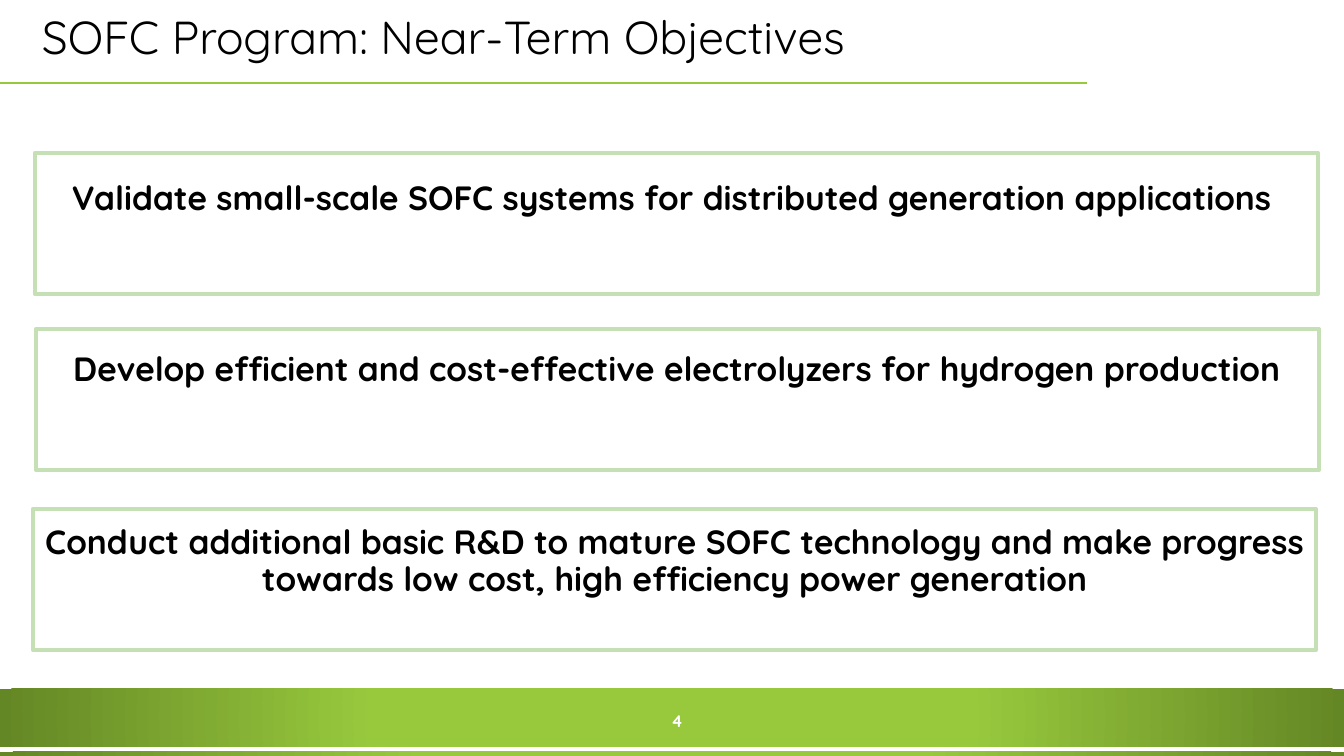
from lxml.etree import SubElement
from pptx import Presentation
from pptx.dml.color import RGBColor
from pptx.enum.shapes import MSO_CONNECTOR, MSO_SHAPE
from pptx.enum.text import MSO_ANCHOR, PP_ALIGN
from pptx.oxml.ns import qn
from pptx.util import Pt

EMU_PER_PX = 914400 / 100.8
PAGE_WIDTH, PAGE_HEIGHT = 1344, 756
FONT = "Quicksand"
BLACK = RGBColor(0x00, 0x00, 0x00)
WHITE = RGBColor(0xFF, 0xFF, 0xFF)
LIME = RGBColor(0x98, 0xC9, 0x3D)
OLIVE = RGBColor(0x64, 0x87, 0x25)
PALE_GREEN = RGBColor(0xC5, 0xE0, 0xB4)

TITLE_FORMAT = {"size": Pt(33), "color": BLACK, "bold": False}
OBJECTIVE_FORMAT = {"size": Pt(24), "color": BLACK, "bold": True}
NUMBER_FORMAT = {"size": Pt(12), "color": WHITE, "bold": True}

OBJECTIVES = [
    ((35, 153), (31, 177),
     "Validate small-scale SOFC systems for distributed generation applications"),
    ((36, 329), (36, 348),
     "Develop efficient and cost-effective electrolyzers for hydrogen production"),
    ((33, 509), (34, 521),
     "Conduct additional basic R&D to mature SOFC technology and make progress "
     "towards low cost, high efficiency power generation"),
]


def px(*lengths):
    """Turn pixel lengths into EMU."""
    return [round(length * EMU_PER_PX) for length in lengths]


def add_rule(page, start, end):
    """Draw the green line under the title."""
    rule = page.shapes.add_connector(MSO_CONNECTOR.STRAIGHT, *px(*start, *end))
    rule.line.color.rgb = LIME
    rule.line.width = Pt(1.75)
    SubElement(rule.element.spPr, qn("a:effectLst"))


def add_rectangle(page, left, top, width, height):
    """Add a rectangle without a shadow."""
    box = page.shapes.add_shape(MSO_SHAPE.RECTANGLE, *px(left, top, width, height))
    box.shadow.inherit = False
    return box


def add_band(page, top, height, lime_end):
    """Add a full-width band shaded from lime at the centre to olive."""
    band = add_rectangle(page, 0, top, PAGE_WIDTH, height)
    band.line.fill.background()
    band.fill.gradient()
    stops = zip(band.fill.gradient_stops, (lime_end, 1), (LIME, OLIVE))
    for stop, position, color in stops:
        stop.position = position
        stop.color.rgb = color
    gradient = band.element.spPr.find(qn("a:gradFill"))
    gradient.remove(gradient.find(qn("a:lin")))
    circle = SubElement(gradient, qn("a:path"), path="circle")
    SubElement(circle, qn("a:fillToRect"),
               {side: "50000" for side in ("l", "t", "r", "b")})


def add_frame(page, left, top):
    """Add the outlined white frame of an objective."""
    frame = add_rectangle(page, left, top, 1283, 141)
    frame.fill.solid()
    frame.fill.fore_color.rgb = WHITE
    frame.line.color.rgb = PALE_GREEN
    frame.line.width = Pt(3)


def add_text(page, place, text, font_format, para_format, anchor=MSO_ANCHOR.TOP):
    """Add a wrapped text box holding one paragraph."""
    box = page.shapes.add_textbox(*px(*place))
    box.text_frame.word_wrap = True
    box.text_frame.vertical_anchor = anchor
    para = box.text_frame.paragraphs[0]
    for name, value in para_format.items():
        setattr(para, name, value)
    span = para.add_run()
    span.text = text
    span.font.name = FONT
    for name, value in font_format.items():
        if name == "color":
            span.font.color.rgb = value
        else:
            setattr(span.font, name, value)


def main():
    """Build the slide and save it."""
    deck = Presentation()
    deck.slide_width, deck.slide_height = px(PAGE_WIDTH, PAGE_HEIGHT)
    page = deck.slides.add_slide(deck.slide_layouts[6])

    add_rule(page, (0, 83), (1087, 83))
    add_band(page, 689, 58, 0.44)
    add_band(page, 752, 4, 0.37)
    add_text(page, (32, 6, 1057, 67), "SOFC Program: Near-Term Objectives",
             TITLE_FORMAT, {"line_spacing": 0.9}, MSO_ANCHOR.MIDDLE)
    add_text(page, (650, 701, 43, 40), "4", NUMBER_FORMAT,
             {"alignment": PP_ALIGN.RIGHT}, MSO_ANCHOR.MIDDLE)

    centred = {"alignment": PP_ALIGN.CENTER, "line_spacing": 0.9,
               "space_after": Pt(12)}
    for frame_corner, text_corner, text in OBJECTIVES:
        add_frame(page, *frame_corner)
        add_text(page, (*text_corner, 1281, 90), text, OBJECTIVE_FORMAT, centred)

    deck.save("out.pptx")


if __name__ == "__main__":
    main()
